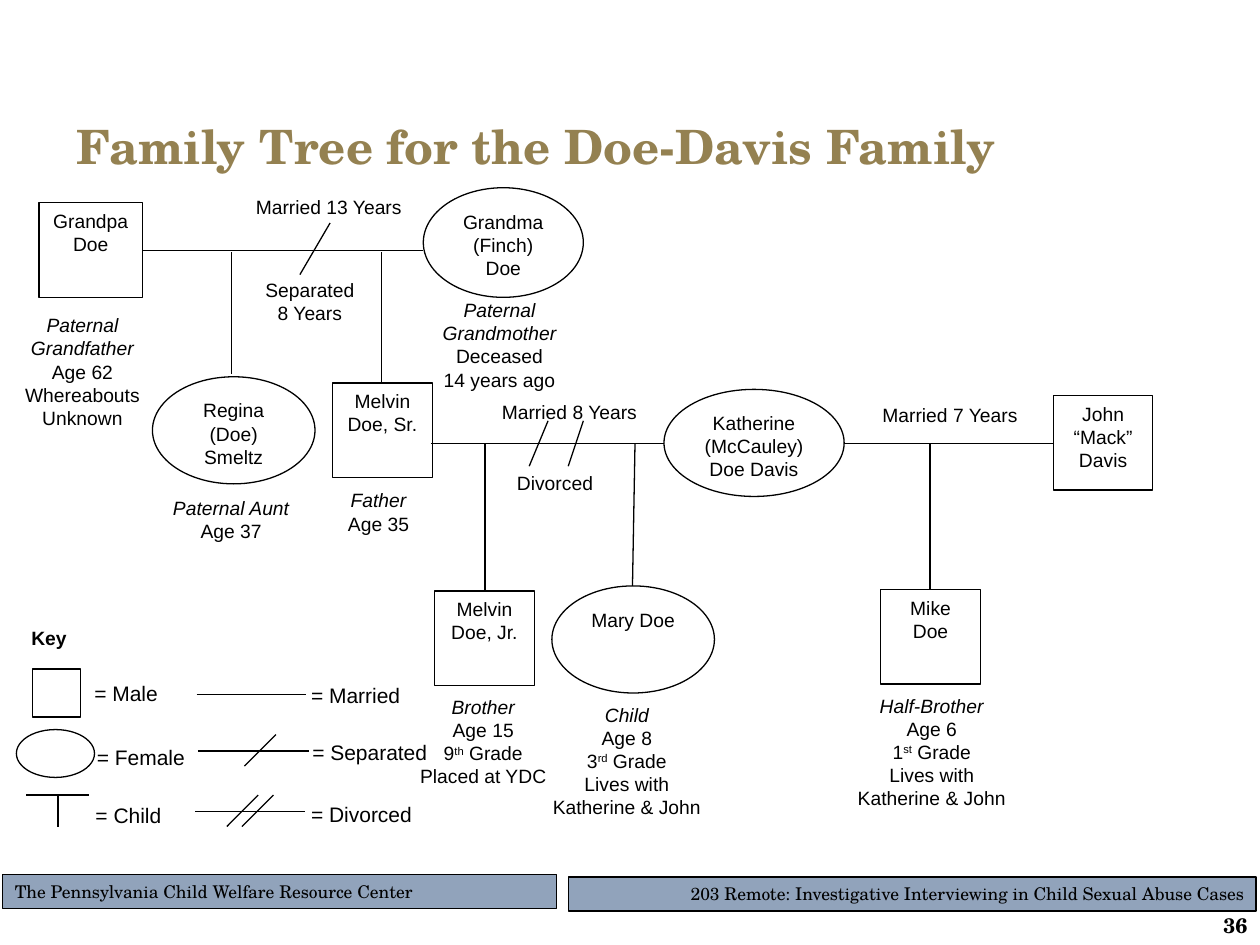
import pptx
import pptx.dml.color
import pptx.enum.shapes
import pptx.enum.text
import pptx.util
from lxml import etree

COLUMNS, ROWS = 10, 7.5
SERIF, SANS = "TeX Gyre Schola", "Arial"
BLACK, WHITE, GOLD, SLATE = "000000", "FFFFFF", "948151", "91A3BB"
LEFT = pptx.enum.text.PP_ALIGN.LEFT
CENTER = pptx.enum.text.PP_ALIGN.CENTER
RIGHT = pptx.enum.text.PP_ALIGN.RIGHT
MIDDLE = pptx.enum.text.MSO_ANCHOR.MIDDLE
GROW = pptx.enum.text.MSO_AUTO_SIZE.SHAPE_TO_FIT_TEXT
FIXED = pptx.enum.text.MSO_AUTO_SIZE.NONE
MALE = pptx.enum.shapes.MSO_SHAPE.RECTANGLE
FEMALE = pptx.enum.shapes.MSO_SHAPE.OVAL

PEOPLE = [
    (MALE, (0.31, 1.61, 0.82, 0.75), "Grandpa Doe"),
    (FEMALE, (3.36, 1.49, 1.27, 0.87), "Grandma (Finch) Doe"),
    (FEMALE, (1.21, 2.99, 1.29, 0.85), "Regina (Doe) Smeltz"),
    (MALE, (2.64, 3.04, 0.79, 0.75), "Melvin Doe, Sr."),
    (FEMALE, (5.27, 3.09, 1.43, 0.85), "Katherine (McCauley) Doe Davis"),
    (MALE, (8.36, 3.14, 0.79, 0.75), "John “Mack” Davis"),
    (MALE, (6.99, 4.68, 0.79, 0.75), "Mike Doe"),
    (FEMALE, (4.38, 4.65, 1.29, 0.85), "Mary Doe"),
    (MALE, (3.45, 4.69, 0.79, 0.75), "Melvin Doe, Jr."),
]
FAMILY_LINES = [
    (1.13, 1.99, 3.36, 1.99), (2.38, 2.18, 2.62, 1.77),
    (1.84, 2, 1.84, 2.97), (3.03, 2, 3.03, 3.03),
    (3.42, 3.52, 5.27, 3.52), (6.7, 3.52, 8.36, 3.52),
    (7.38, 3.52, 7.38, 4.68), (5.04, 3.52, 5.02, 4.65),
    (3.85, 3.52, 3.85, 4.69), (4.35, 3.34, 4.2, 3.7),
    (4.63, 3.34, 4.51, 3.7),
]
CAPTIONS = [
    ((0.09, 2.44, 1.13, 1.03),
     ["Paternal Grandfather", "Age 62", "Whereabouts", "Unknown"]),
    ((1.27, 3.89, 1.13, 0.47), ["Paternal Aunt", "Age 37"]),
    ((2.44, 3.83, 1.13, 0.47), ["Father", "Age 35"]),
    ((3.4, 2.32, 1.13, 0.84),
     ["Paternal Grandmother", "Deceased", "14 years ago"]),
    ((6.7, 5.46, 1.39, 1.03),
     ["Half-Brother", "Age 6", "1^st^ Grade", "Lives with Katherine & John"]),
    ((4.28, 5.53, 1.39, 1.03),
     ["Child", "Age 8", "3^rd^ Grade", "Lives with Katherine & John"]),
    ((3.14, 5.47, 1.39, 0.84),
     ["Brother", "Age 15", "9^th^ Grade", "Placed at YDC"]),
]
UNION_LABELS = [
    ((3.84, 3.69, 1.13, 0.29), ["Divorced"]),
    ((3.77, 3.13, 1.5, 0.29), ["Married 8 Years"]),
    ((6.79, 3.15, 1.5, 0.29), ["Married 7 Years"]),
    ((1.86, 1.5, 1.5, 0.29), ["Married 13 Years"]),
    ((1.71, 2.16, 1.5, 0.47), ["Separated", "8 Years"]),
]
KEY_SYMBOLS = [
    [(0.21, 6.31, 0.71, 6.31), (0.46, 6.31, 0.46, 6.56)],
    [(1.56, 5.51, 2.43, 5.51)],
    [(1.57, 5.96, 2.45, 5.96), (1.94, 6.08, 2.19, 5.83)],
    [(1.55, 6.44, 2.42, 6.44), (1.8, 6.56, 2.05, 6.31),
     (1.92, 6.56, 2.17, 6.31)],
]
KEY_LABELS = [
    ((0.65, 5.35, 0.71, 0.3), "= Male"),
    ((0.67, 5.86, 0.91, 0.3), "= Female"),
    ((0.66, 6.32, 0.73, 0.3), "= Child"),
    ((2.37, 5.37, 0.92, 0.3), "= Married"),
    ((2.38, 5.82, 1.12, 0.3), "= Separated"),
    ((2.37, 6.31, 1.01, 0.3), "= Divorced"),
]


def grid(*cells):
    """Turn column and row counts, each one inch wide, into lengths."""
    return [pptx.util.Inches(cell) for cell in cells]


def color(value):
    """Return the colour for a hex string."""
    return pptx.dml.color.RGBColor.from_string(value)


def write(shape, lines, size=11, font=SANS, fill=BLACK, bold=False,
          lead_italic=False, align=CENTER, anchor=None, wrap=True, fit=None):
    """Fill a shape with paragraphs, raising the parts between carets."""
    frame = shape.text_frame
    frame.word_wrap = wrap
    frame.vertical_anchor = anchor or pptx.enum.text.MSO_ANCHOR.TOP
    frame.auto_size = fit or FIXED
    for index, line in enumerate(lines):
        paragraph = frame.paragraphs[0] if index == 0 else frame.add_paragraph()
        paragraph.alignment = align
        for part_index, part in enumerate(line.split("^")):
            run = paragraph.add_run()
            run.text = part
            run.font.size = pptx.util.Pt(size)
            run.font.name = font
            run.font.bold = bold
            run.font.italic = lead_italic and index == 0
            run.font.color.rgb = color(fill)
            if part_index % 2:
                run._r.get_or_add_rPr().set("baseline", "30000")


def add_outlined(slide, kind, box, fill=WHITE, width=0.75):
    """Add a filled shape with a thin black outline."""
    shape = slide.shapes.add_shape(kind, *grid(*box))
    shape.shadow.inherit = False
    shape.fill.solid()
    shape.fill.fore_color.rgb = color(fill)
    shape.line.color.rgb = color(BLACK)
    shape.line.width = pptx.util.Pt(width)
    return shape


def add_line(shapes, ends):
    """Add a thin black line without a shadow."""
    line = shapes.add_connector(
        pptx.enum.shapes.MSO_CONNECTOR.STRAIGHT, *grid(*ends))
    line.line.color.rgb = color(BLACK)
    line.line.width = pptx.util.Pt(0.75)
    etree.SubElement(line._element.spPr, pptx.oxml.ns.qn("a:effectLst"))


def add_label(slide, box, lines, **text_format):
    """Add a text box that grows with its text."""
    text_format.setdefault("fit", GROW)
    write(slide.shapes.add_textbox(*grid(*box)), lines, **text_format)


def add_frame(slide):
    """Add the title, the footer bars and the page number."""
    title = slide.shapes.title
    title.left, title.top, title.width, title.height = grid(0.51, 0.83, 9, 0.65)
    write(title, ["Family Tree for the Doe-Davis Family"], size=27, font=SERIF,
          fill=GOLD, bold=True, align=LEFT, anchor=MIDDLE)
    course = add_outlined(slide, MALE, (4.51, 6.96, 5.46, 0.27), SLATE)
    write(course,
          ["203 Remote: Investigative Interviewing in Child Sexual Abuse Cases"],
          size=10, font=SERIF, align=RIGHT, fit=GROW)
    center = add_outlined(slide, MALE, (0.02, 6.94, 4.4, 0.27), SLATE, 0.5)
    write(center, ["The Pennsylvania Child Welfare Resource Center"],
          size=10, font=SERIF, align=LEFT, fit=GROW)
    add_label(slide, (8.89, 7.24, 1.11, 0.21), ["36"], size=12, font=SERIF,
              bold=True, align=RIGHT, anchor=MIDDLE, fit=FIXED)


def add_family(slide):
    """Add the people, the lines between them and their captions."""
    for kind, box, name in PEOPLE:
        write(add_outlined(slide, kind, box), [name])
    for ends in FAMILY_LINES:
        add_line(slide.shapes, ends)
    for box, lines in CAPTIONS:
        add_label(slide, box, lines, lead_italic=True)
    for box, lines in UNION_LABELS:
        add_label(slide, box, lines)


def add_key(slide):
    """Add the key to the symbols."""
    add_label(slide, (0.15, 4.92, 1.13, 0.29), ["Key"], bold=True, align=LEFT)
    add_outlined(slide, MALE, (0.26, 5.31, 0.38, 0.38))
    add_outlined(slide, FEMALE, (0.13, 5.79, 0.62, 0.38))
    for symbol in KEY_SYMBOLS:
        shapes = slide.shapes
        if len(symbol) > 1:
            shapes = slide.shapes.add_group_shape().shapes
        for ends in symbol:
            add_line(shapes, ends)
    for box, text in KEY_LABELS:
        add_label(slide, box, [text], size=12, align=LEFT, wrap=False)


def main():
    """Build the family tree slide and save it."""
    presentation = pptx.Presentation()
    presentation.slide_width, presentation.slide_height = grid(COLUMNS, ROWS)
    slide = presentation.slides.add_slide(presentation.slide_layouts[5])
    add_frame(slide)
    add_family(slide)
    add_key(slide)
    presentation.save("out.pptx")


if __name__ == "__main__":
    main()
